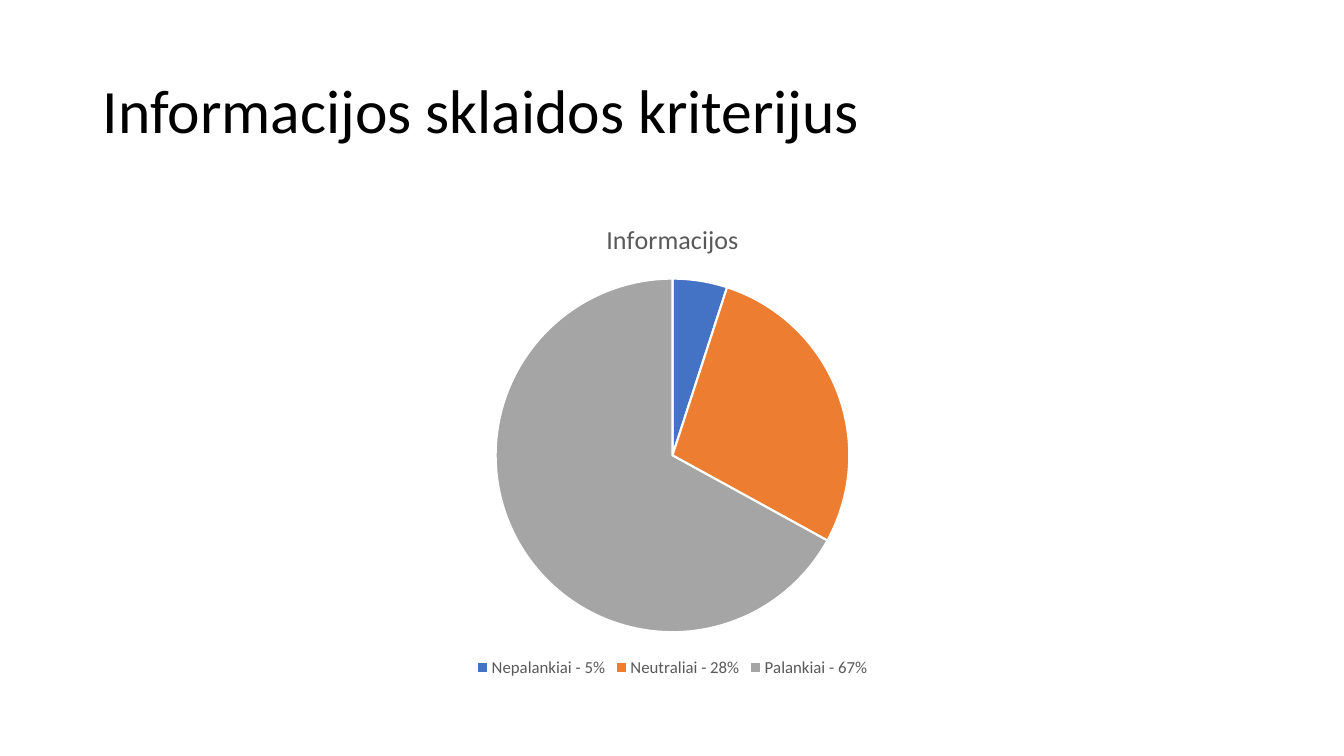
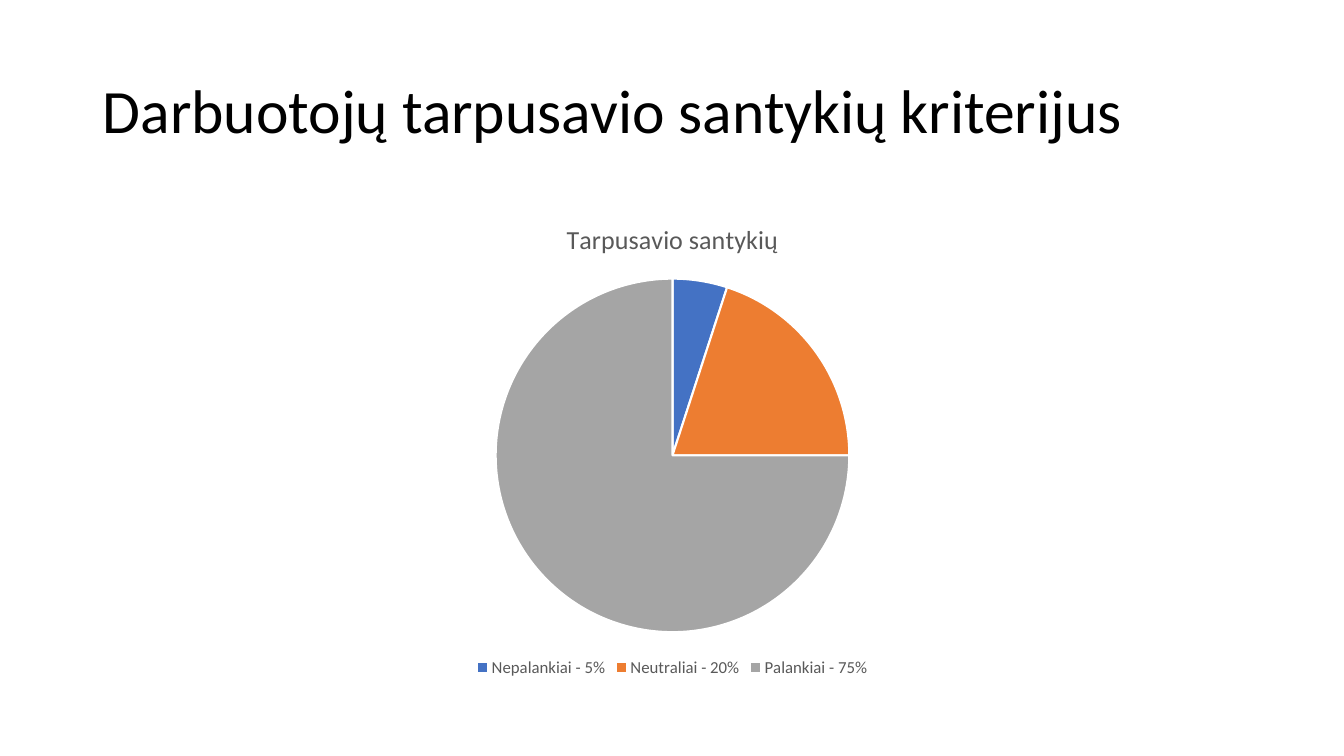
from pptx import Presentation
from pptx.chart.data import CategoryChartData
from pptx.dml.color import RGBColor
from pptx.enum.chart import XL_CHART_TYPE, XL_LEGEND_POSITION
from pptx.enum.text import MSO_ANCHOR
from pptx.util import Inches, Pt

PIE = XL_CHART_TYPE.PIE
BOTTOM = XL_LEGEND_POSITION.BOTTOM
MIDDLE = MSO_ANCHOR.MIDDLE

BLACK = RGBColor(0x00, 0x00, 0x00)
WHITE = RGBColor(0xFF, 0xFF, 0xFF)
GRAY = RGBColor(0x59, 0x59, 0x59)
BLUE = RGBColor(0x44, 0x72, 0xC4)
ORANGE = RGBColor(0xED, 0x7D, 0x31)
SILVER = RGBColor(0xA5, 0xA5, 0xA5)

RATINGS = {"Nepalankiai": BLUE, "Neutraliai": ORANGE, "Palankiai": SILVER}

# Slide title, chart title, percentages in the order of RATINGS
CRITERIA = [
    ("Informacijos sklaidos kriterijus", "Informacijos", (5, 28, 67)),
    ("Darbuotojų tarpusavio santykių kriterijus", "Tarpusavio santykių",
     (5, 20, 75)),
]


def set_font(font, size, color, name="Calibri", bold=False):
    font.name = name
    font.size = Pt(size)
    font.bold = bold
    font.color.rgb = color


def write_text(tf, text, size, color, line_spacing=None):
    p = tf.paragraphs[0]
    p.line_spacing = line_spacing
    r = p.add_run()
    r.text = text
    set_font(r.font, size, color)


class Deck:
    left, width = Inches(0.92), Inches(11.5)

    def __init__(self):
        self.prs = Presentation()
        self.prs.slide_width = Inches(13.33)
        self.prs.slide_height = Inches(7.5)
        self.s = None

    def add_slide(self):
        self.s = self.prs.slides.add_slide(self.prs.slide_layouts[6])

    def add_title(self, text):
        box = self.s.shapes.add_textbox(self.left, Inches(0.4),
                                        self.width, Inches(1.45))
        tf = box.text_frame
        tf.word_wrap = True
        tf.vertical_anchor = MIDDLE
        write_text(tf, text, 44, BLACK, line_spacing=0.9)

    def add_pie(self, title, values):
        data = CategoryChartData(number_format="General")
        data.categories = [f"{name} - {value}%"
                           for name, value in zip(RATINGS, values)]
        data.add_series(title, values)
        chart = self.s.shapes.add_chart(PIE, self.left, Inches(2), self.width,
                                        Inches(4.76), data).chart
        set_font(chart.font, 10, BLACK)

        chart.has_title = True
        write_text(chart.chart_title.text_frame, title, 18.6, GRAY)
        chart.chart_title.include_in_layout = False

        chart.has_legend = True
        chart.legend.position = BOTTOM
        chart.legend.include_in_layout = False
        set_font(chart.legend.font, 12, GRAY)

        plot = chart.plots[0]
        plot.vary_by_categories = True
        for i, color in enumerate(RATINGS.values()):
            wedge = plot.series[0].points[i].format
            wedge.fill.solid()
            wedge.fill.fore_color.rgb = color
            wedge.line.color.rgb = WHITE
            wedge.line.width = Pt(1.5)


def main():
    deck = Deck()
    for title, chart_title, values in CRITERIA:
        deck.add_slide()
        deck.add_title(title)
        deck.add_pie(chart_title, values)
    deck.prs.save("out.pptx")


if __name__ == "__main__":
    main()
